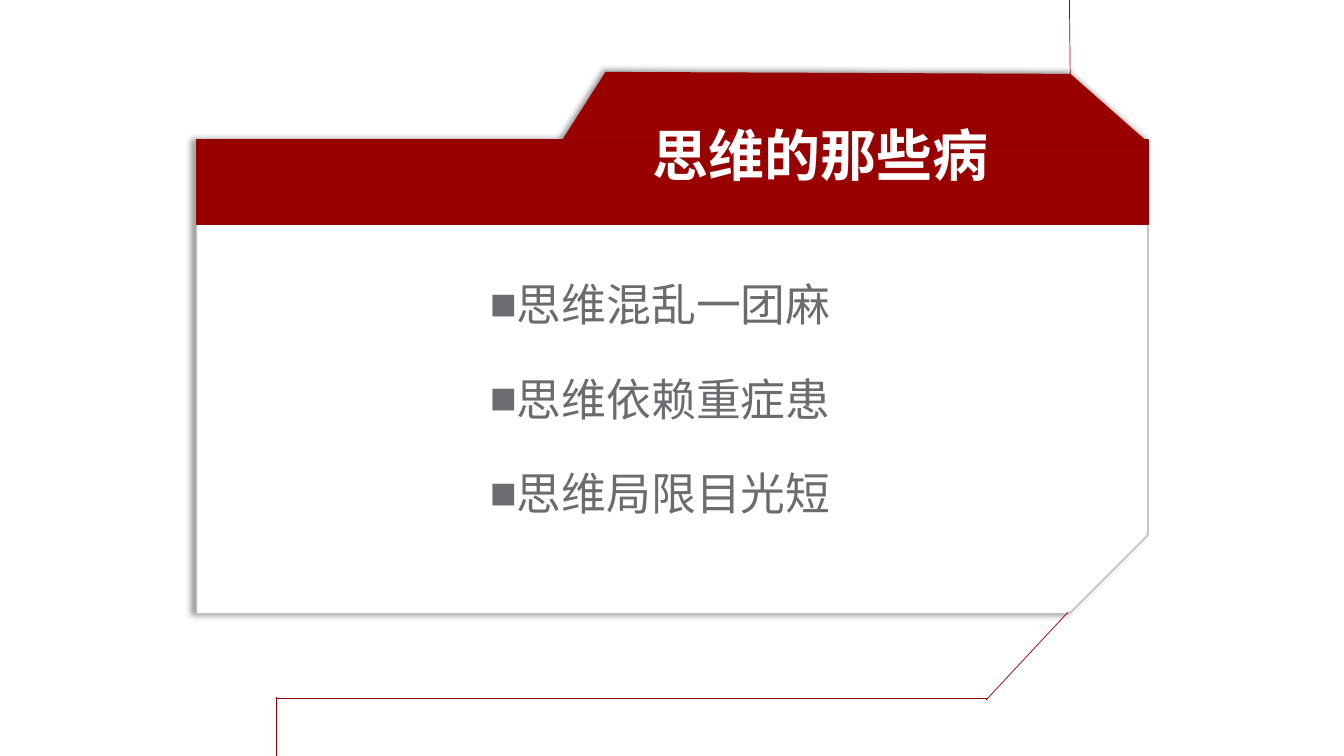
from dataclasses import dataclass

from lxml import etree
from pptx import Presentation
from pptx.dml.color import RGBColor
from pptx.enum.shapes import MSO_CONNECTOR, MSO_SHAPE
from pptx.enum.text import MSO_ANCHOR, MSO_AUTO_SIZE, PP_ALIGN
from pptx.oxml.ns import qn
from pptx.util import Cm, Pt


@dataclass(frozen=True)
class Theme:
    font: str = "Noto Sans CJK SC"
    bullet_font: str = "Arial"
    red: str = "990000"
    white: str = "FFFFFF"
    border: str = "BFBFBF"
    text: str = "6B6C70"
    shadow: str = "000000"
    title_size: int = 40
    body_size: int = 32
    outline: float = 1
    hairline: float = 0.5


THEME = Theme()
SLIDE_W, SLIDE_H = 33.87, 19.05
FOLDER = (4.95, 3.53, 23.98, 11.94)
BAND_H = 2.13
DISEASES = ["思维混乱一团麻", "思维依赖重症患", "思维局限目光短"]


def rgb(value):
    return RGBColor.from_string(value)


def paint(sp, fill, line):
    sp.shadow.inherit = False
    sp.fill.solid()
    sp.fill.fore_color.rgb = rgb(fill)
    sp.line.color.rgb = rgb(line)
    sp.line.width = Pt(THEME.outline)


def cast_shadow(sp, angle):
    effects = sp.element.spPr.find(qn("a:effectLst"))
    shadow = etree.SubElement(
        effects, qn("a:outerShdw"), blurRad=str(Pt(4)), dist=str(Pt(3)),
        dir=str(angle * 60000), algn="ctr", rotWithShape="0")
    color = etree.SubElement(shadow, qn("a:srgbClr"), val=THEME.shadow)
    etree.SubElement(color, qn("a:alpha"), val="40000")


def add_rule(s, *ends):
    line = s.shapes.add_connector(MSO_CONNECTOR.STRAIGHT, *map(Cm, ends))
    line.line.color.rgb = rgb(THEME.red)
    line.line.width = Pt(THEME.hairline)
    etree.SubElement(line.element.spPr, qn("a:effectLst"))


def place(s, sp, *box):
    sp.left, sp.top, sp.width, sp.height = map(Cm, box)
    s.shapes.element.append(sp.element)
    tf = sp.text_frame
    tf.word_wrap = True
    return tf


def add_run(p, text, size, color, bold=False):
    r = p.add_run()
    r.text = text
    r.font.name = THEME.font
    r.font.size = Pt(size)
    r.font.bold = bold
    r.font.color.rgb = rgb(color)
    latin = r.font._element.find(qn("a:latin"))
    ea = etree.Element(qn("a:ea"), typeface=THEME.font)
    latin.addnext(ea)


def add_bullet(p):
    pPr = p._p.get_or_add_pPr()
    pPr.set("marL", str(Cm(0.64)))
    pPr.set("indent", str(Cm(-0.64)))
    etree.SubElement(pPr, qn("a:buFont"), typeface=THEME.bullet_font)
    etree.SubElement(pPr, qn("a:buChar"), char="■")


def add_card(s, x, y, w, h):
    card = s.shapes.add_shape(MSO_SHAPE.SNIP_1_RECTANGLE, *map(Cm, (x, y, w, h)))
    paint(card, THEME.white, THEME.border)
    card.element.spPr.get_or_add_xfrm().set("flipV", "1")
    cast_shadow(card, 180)
    band = s.shapes.add_shape(MSO_SHAPE.RECTANGLE, *map(Cm, (x, y, w, BAND_H)))
    paint(band, THEME.red, THEME.red)


def add_tab(s, x, y, w, h):
    corners = [(w, 0.08), (w - 1.96, -1.65), (10.32, -1.7), (9.22, 0.03)]
    points = [(Cm(x + dx), Cm(y + dy)) for dx, dy in corners]
    builder = s.shapes.build_freeform(*points[0])
    builder.add_line_segments(points[1:], close=True)
    tab = builder.convert_to_shape()
    paint(tab, THEME.red, THEME.red)
    cast_shadow(tab, 225)


def add_title(s, x, y, w, h):
    tf = place(s, s.shapes.title, x + 11.25, y - 0.63, 9.3, 1.96)
    tf.auto_size = MSO_AUTO_SIZE.SHAPE_TO_FIT_TEXT
    tf.vertical_anchor = MSO_ANCHOR.MIDDLE
    p = tf.paragraphs[0]
    p.alignment = PP_ALIGN.LEFT
    add_run(p, "思维的那些病", THEME.title_size, THEME.white, True)


def add_list(s, x, y, w, h):
    tf = place(s, s.placeholders[1], x + 7.14, y + 2.64, 9.7, 8.38)
    tf.auto_size = MSO_AUTO_SIZE.NONE
    tf.vertical_anchor = MSO_ANCHOR.TOP
    for i, text in enumerate(DISEASES):
        p = tf.add_paragraph() if i else tf.paragraphs[0]
        add_bullet(p)
        p.alignment = PP_ALIGN.LEFT
        p.line_spacing = 1.5
        p.space_before = Pt(10 if i else 0)
        add_run(p, text, THEME.body_size, THEME.text)


def add_trail(s, x, y, w, h):
    foot = y + h
    left, base = x + 2.01, foot + 2.12
    add_rule(s, x + 19.94, base, left, base)
    add_rule(s, left, base - 0.03, left, SLIDE_H)
    add_rule(s, x + 21.97, foot - 0.05, x + 19.89, foot + 2.18)


def add_folder_slide(prs, box):
    s = prs.slides.add_slide(prs.slide_layouts[1])
    x, y, w, h = box
    add_rule(s, x + 22, 0, x + 22.02, y - 1.65)
    add_card(s, *box)
    add_list(s, *box)
    add_tab(s, *box)
    add_title(s, *box)
    add_trail(s, *box)


def main():
    prs = Presentation()
    prs.slide_width, prs.slide_height = Cm(SLIDE_W), Cm(SLIDE_H)
    add_folder_slide(prs, FOLDER)
    prs.save("out.pptx")


if __name__ == "__main__":
    main()
